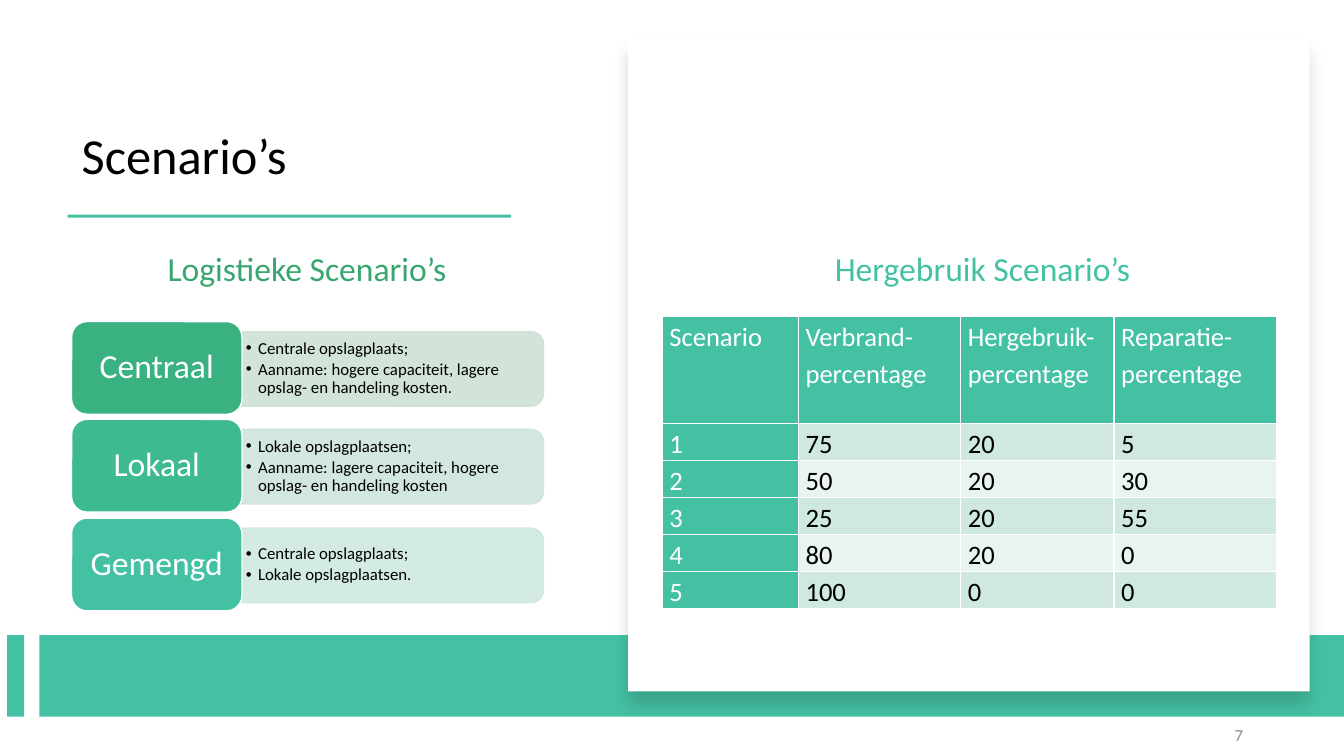
"""Build the slide that compares logistics and reuse scenarios."""
from lxml.etree import SubElement
from pptx import Presentation
from pptx.dml.color import RGBColor
from pptx.enum.shapes import MSO_SHAPE as Shape
from pptx.enum.text import MSO_ANCHOR as Anchor, MSO_AUTO_SIZE as AutoSize, PP_ALIGN as Align
from pptx.oxml.ns import qn
from pptx.util import Pt

PX = 9144
FONT = "Calibri"
TEAL, WHITE, BLACK = "44C1A3", "FFFFFF", "000000"
LOGISTICS = [
    ("Centraal", "3AB180", "CEE1D5",
     ["Centrale opslagplaats;",
      "Aanname: hogere capaciteit, lagere opslag- en handeling kosten."]),
    ("Lokaal", "3EBA92", "CEE5DA",
     ["Lokale opslagplaatsen;",
      "Aanname: lagere capaciteit, hogere opslag- en handeling kosten"]),
    ("Gemengd", TEAL, "CFE9E0",
     ["Centrale opslagplaats;", "Lokale opslagplaatsen."]),
]
REUSE = [
    ["Scenario", "Verbrand-percentage", "Hergebruik-percentage", "Reparatie-percentage"],
    ["1", "75", "20", "5"],
    ["2", "50", "20", "30"],
    ["3", "25", "20", "55"],
    ["4", "80", "20", "0"],
    ["5", "100", "0", "0"],
]


def emu(*lengths):
    """Turn px lengths into EMU."""
    return [length * PX for length in lengths]


def color(value):
    """Turn a hex string into a colour."""
    return RGBColor.from_string(value)


def write(paragraph, text, size, ink, align=Align.LEFT, spacing=0.9, after=0):
    """Add one formatted run to a paragraph."""
    paragraph.alignment = align
    paragraph.line_spacing = spacing
    paragraph.space_before, paragraph.space_after = Pt(0), Pt(after)
    run = paragraph.add_run()
    run.text = text
    run.font.name, run.font.size = FONT, Pt(size)
    run.font.color.rgb = color(ink)


def set_frame(frame, anchor=Anchor.MIDDLE, side=0, edge=0):
    """Set wrapping, anchor and insets of a text frame."""
    frame.word_wrap = True
    frame.auto_size = AutoSize.NONE
    frame.vertical_anchor = anchor
    frame.margin_left = frame.margin_right = side * PX
    frame.margin_top = frame.margin_bottom = edge * PX


def add_block(slide, kind, box, fill, outline=None):
    """Draw a filled preset shape without a shadow."""
    block = slide.shapes.add_shape(kind, *emu(*box))
    block.shadow.inherit = False
    block.fill.solid()
    block.fill.fore_color.rgb = color(fill)
    if outline:
        block.line.color.rgb = color(outline)
        block.line.width = Pt(1)
    else:
        block.line.fill.background()
    return block


def add_text(slide, box, text, size, ink, align=Align.CENTER):
    """Place one line of text in a box."""
    frame = slide.shapes.add_textbox(*emu(*box)).text_frame
    set_frame(frame, side=9, edge=4)
    write(frame.paragraphs[0], text, size, ink, align)


def add_title(slide, text):
    """Fill and place the title placeholder."""
    title = slide.shapes.title
    title.left, title.top, title.width, title.height = emu(71, 58, 468, 131)
    set_frame(title.text_frame, Anchor.BOTTOM, side=10, edge=5)
    write(title.text_frame.paragraphs[0], text, 36, BLACK)


def add_card(slide):
    """Draw the white card with its soft drop shadow."""
    card = add_block(slide, Shape.RECTANGLE, (623, 39, 676, 647), WHITE)
    effects = card._element.spPr.find(qn("a:effectLst"))
    shadow = SubElement(effects, qn("a:outerShdw"), blurRad=str(Pt(11)),
                        dist=str(Pt(10)), dir="5400000", algn="t", rotWithShape="0")
    tint = SubElement(shadow, qn("a:srgbClr"), val=BLACK)
    SubElement(tint, qn("a:alpha"), val="15000")


def add_bullets(slide, box, items):
    """Place a bulleted list in a text box."""
    frame = slide.shapes.add_textbox(*emu(*box)).text_frame
    set_frame(frame, side=5, edge=3)
    for index, item in enumerate(items):
        paragraph = frame.add_paragraph() if index else frame.paragraphs[0]
        write(paragraph, item, 12, BLACK, after=2)
        properties = paragraph._p.get_or_add_pPr()
        properties.set("marL", str(12 * PX))
        properties.set("indent", str(-12 * PX))
        SubElement(properties, qn("a:buFont"), typeface="Arial")
        SubElement(properties, qn("a:buChar"), char="•")


def add_scenario(slide, top, name, fill, tint, items):
    """Draw a scenario label with its explanation panel."""
    panel = add_block(slide, Shape.ROUND_2_SAME_RECTANGLE,
                      (352, top - 103, 74, 300), tint, tint)
    panel.rotation = 90
    for shade in panel._element.spPr.iter(qn("a:srgbClr")):
        SubElement(shade, qn("a:alpha"), val="90000")
    add_bullets(slide, (239, top + 13, 296, 67), items)
    label = add_block(slide, Shape.ROUNDED_RECTANGLE, (71, top, 169, 92), fill, WHITE)
    set_frame(label.text_frame)
    write(label.text_frame.paragraphs[0], name, 24, WHITE, Align.CENTER)


def add_cell_borders(cell):
    """Give a table cell thin white borders."""
    properties = cell._tc.get_or_add_tcPr()
    for side in ("lnL", "lnR", "lnT", "lnB"):
        border = SubElement(properties, qn(f"a:{side}"), w=str(Pt(1)))
        SubElement(SubElement(border, qn("a:solidFill")), qn("a:srgbClr"), val=WHITE)


def add_reuse_table(slide):
    """Build the table of reuse percentages."""
    table = slide.shapes.add_table(len(REUSE), 4, *emu(657, 314, 609, 286)).table
    table.first_col = True
    for column, width in zip(table.columns, (135, 161, 152, 161)):
        column.width = width * PX
    for row_index, values in enumerate(REUSE):
        table.rows[row_index].height = (36 if row_index else 106) * PX
        for column_index, value in enumerate(values):
            heading = row_index == 0 or column_index == 0
            band = "CFE9E0" if row_index % 2 else "E9F4F0"
            cell = table.cell(row_index, column_index)
            cell.margin_left = cell.margin_right = 7 * PX
            cell.margin_top = cell.margin_bottom = 0
            add_cell_borders(cell)
            cell.fill.solid()
            cell.fill.fore_color.rgb = color(TEAL if heading else band)
            write(cell.text_frame.paragraphs[0], value, 19,
                  WHITE if heading else BLACK, Align.JUSTIFY, 1.15, 8)


def main():
    """Compose and save the slide."""
    deck = Presentation()
    deck.slide_width, deck.slide_height = emu(1333, 750)
    slide = deck.slides.add_slide(deck.slide_layouts[5])
    add_title(slide, "Scenario’s")
    add_block(slide, Shape.RECTANGLE, (67, 213, 440, 3), TEAL)
    add_text(slide, (75, 227, 459, 83), "Logistieke Scenario’s", 24, "37A76F")
    for index, scenario in enumerate(LOGISTICS):
        add_scenario(slide, 319 + 195 * index // 2, *scenario)
    for left, width in ((7, 17), (39, 1294)):
        add_block(slide, Shape.RECTANGLE, (left, 630, width, 81), TEAL)
    add_card(slide)
    add_text(slide, (942, 710, 300, 40), "7", 12, "8C8C8C", Align.RIGHT)
    add_text(slide, (745, 227, 459, 83), "Hergebruik Scenario’s", 24, TEAL)
    add_reuse_table(slide)
    deck.save("out.pptx")


if __name__ == "__main__":
    main()
